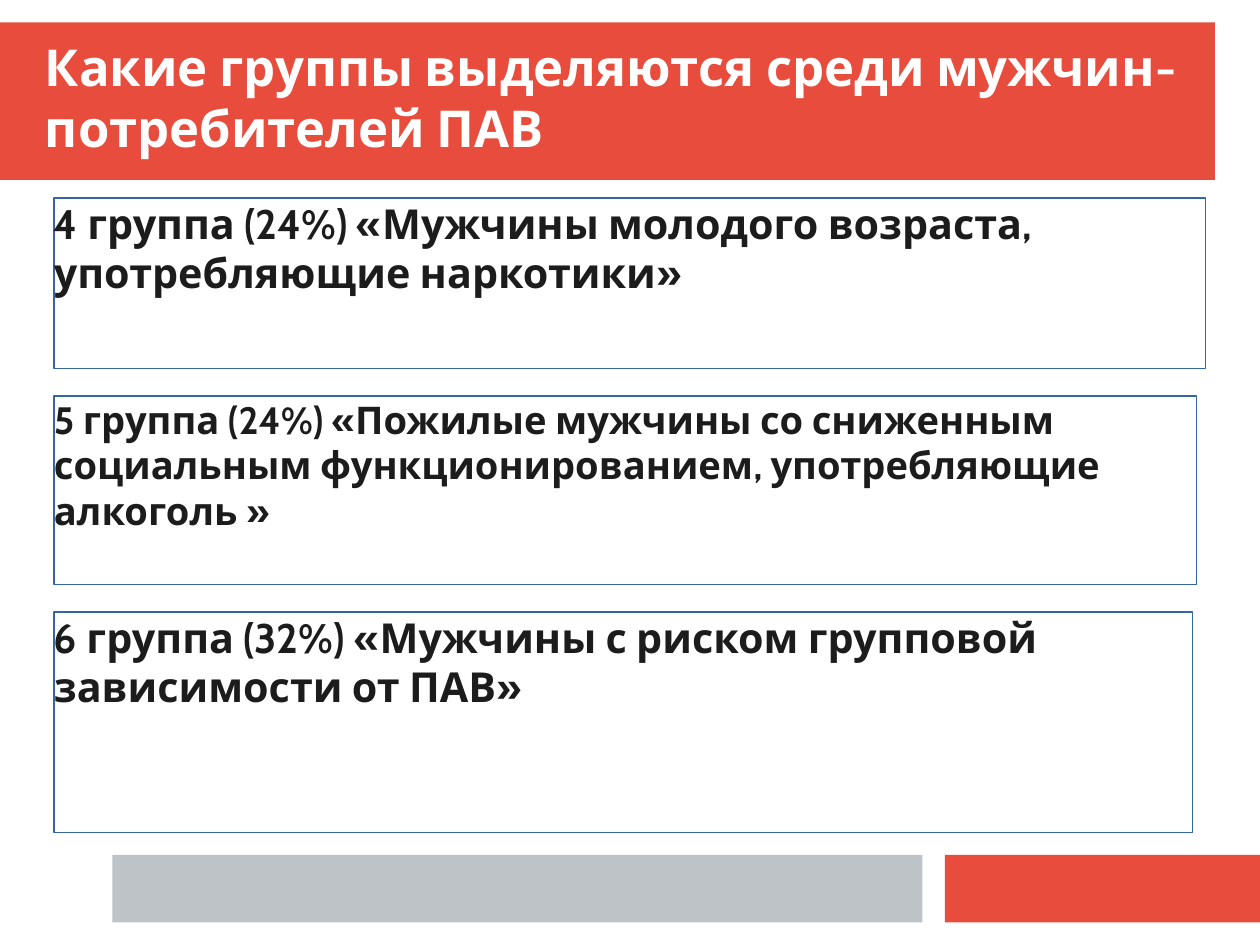
from pptx import Presentation
from pptx.dml.color import RGBColor
from pptx.enum.shapes import MSO_SHAPE
from pptx.enum.text import MSO_ANCHOR, PP_ALIGN
from pptx.util import Cm, Pt

RED = "E74C3C"
GREY = "BDC3C7"
BLUE = "3465A4"
DARK = "1C1C1C"
WHITE = "FFFFFF"

TITLE = "Какие группы выделяются среди мужчин-потребителей ПАВ"
BARS = [
    (0, 0.5, 27, 3.5, RED),
    (21, 19, 7, 1.5, RED),
    (2.5, 19, 18, 1.5, GREY),
]
GROUPS = [
    (25.6, 3.8, 26, "4 группа (24%) «Мужчины молодого возраста, употребляющие наркотики»"),
    (25.4, 4.2, 24, "5 группа (24%) «Пожилые мужчины со сниженным социальным "
                    "функционированием, употребляющие алкоголь »"),
    (25.3, 4.9, 26, "6 группа (32%) «Мужчины с риском групповой зависимости от ПАВ»"),
]
GROUP_LEFT = 1.2
GROUP_TOP = 4.4
GROUP_GAP = 0.6


def color(value):
    return RGBColor.from_string(value)


def set_attributes(target, values):
    for name, value in values.items():
        setattr(target, name, value)


def write_text(box, text, size, ink, anchor):
    frame = box.text_frame
    set_attributes(frame, {
        "word_wrap": True, "vertical_anchor": anchor,
        "margin_left": 0, "margin_top": 0, "margin_right": 0, "margin_bottom": 0,
    })
    para = frame.paragraphs[0]
    para.alignment = PP_ALIGN.LEFT
    span = para.add_run()
    span.text = text
    set_attributes(span.font, {"name": "Cabin", "size": Pt(size), "bold": True})
    span.font.color.rgb = color(ink)


def add_rectangle(page, left, top, width, height):
    box = page.shapes.add_shape(
        MSO_SHAPE.RECTANGLE, Cm(left), Cm(top), Cm(width), Cm(height))
    box.shadow.inherit = False
    return box


def add_bar(page, left, top, width, height, fill):
    bar = add_rectangle(page, left, top, width, height)
    bar.fill.solid()
    bar.fill.fore_color.rgb = color(fill)
    bar.line.fill.background()


def add_title(page, text):
    box = page.shapes.add_textbox(Cm(1), Cm(1), Cm(26), Cm(2.5))
    write_text(box, text, 32, WHITE, MSO_ANCHOR.BOTTOM)


def add_group(page, top, width, height, size, text):
    box = add_rectangle(page, GROUP_LEFT, top, width, height)
    box.fill.background()
    box.line.color.rgb = color(BLUE)
    box.line.width = Pt(0.75)
    write_text(box, text, size, DARK, MSO_ANCHOR.TOP)


def main():
    deck = Presentation()
    set_attributes(deck, {"slide_width": Cm(28), "slide_height": Cm(21)})
    page = deck.slides.add_slide(deck.slide_layouts[6])
    for bar in BARS:
        add_bar(page, *bar)
    add_title(page, TITLE)
    top = GROUP_TOP
    for width, height, size, text in GROUPS:
        add_group(page, top, width, height, size, text)
        top += height + GROUP_GAP
    deck.save("out.pptx")


if __name__ == "__main__":
    main()
